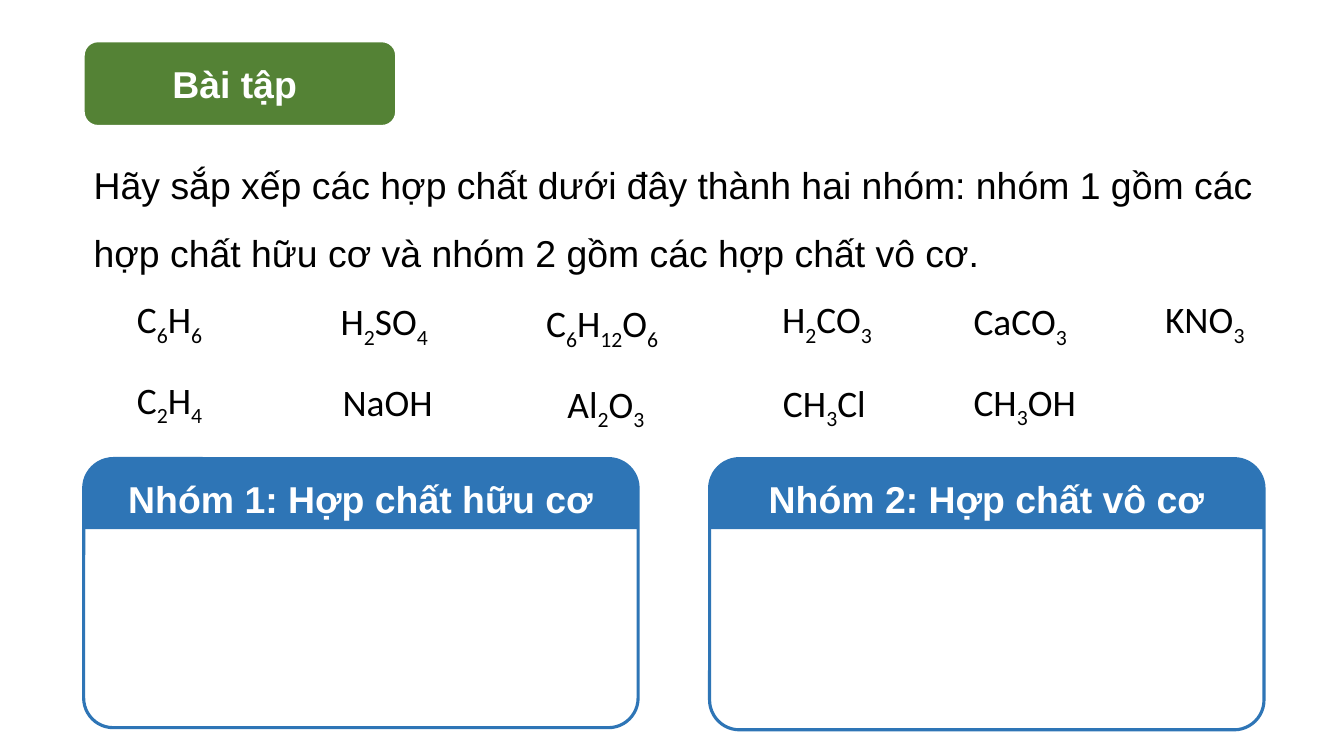
from itertools import groupby

from lxml import etree
from pptx import Presentation
from pptx.dml.color import RGBColor
from pptx.enum import shapes, text
from pptx.util import Pt

WHITE = RGBColor(0xFF, 0xFF, 0xFF)
BLACK = RGBColor(0, 0, 0)
GREEN = RGBColor(0x54, 0x82, 0x35)
BLUE = RGBColor(0x2E, 0x75, 0xB6)

TEXT_SIZE = Pt(26.7)
MARGIN = 59.8
GROUP_WIDTH = 396

# formula, left, top, width
COMPOUNDS = [
    ("C6H6", 90.7, 208.1, 73.4),
    ("H2SO4", 236.2, 209.5, 92.9),
    ("C6H12O6", 383, 211, 114.5),
    ("H2CO3", 551.5, 208.1, 94.3),
    ("CaCO3", 688.3, 209.5, 99.4),
    ("KNO3", 825.1, 208.1, 82.8),
    ("C2H4", 90.7, 265.7, 73.4),
    ("NaOH", 237.6, 267.1, 89.3),
    ("Al2O3", 398.2, 268.6, 79.2),
    ("CH3Cl", 552.2, 267.8, 88.6),
    ("CH3OH", 688.3, 267.1, 103.7),
]


def style_run(run, font_name, color, bold=False):
    run.font.name = font_name
    run.font.size = TEXT_SIZE
    run.font.color.rgb = color
    run.font.bold = bold


def add_panel(slide, preset, box, fill, line=None, line_width=0, corners=()):
    panel = slide.shapes.add_shape(preset, *map(Pt, box))
    panel.shadow.inherit = False
    panel.fill.solid()
    panel.fill.fore_color.rgb = fill
    if line is None:
        panel.line.fill.background()
    else:
        panel.line.color.rgb = line
        panel.line.width = Pt(line_width)
    for index, corner in enumerate(corners):
        panel.adjustments[index] = corner
    return panel


def write_heading(panel, wording):
    frame = panel.text_frame
    frame.text = wording
    frame.vertical_anchor = text.MSO_ANCHOR.MIDDLE
    heading = frame.paragraphs[0]
    heading.alignment = text.PP_ALIGN.CENTER
    style_run(heading.runs[0], "Arial", WHITE, bold=True)


def add_title(slide, box):
    badge = add_panel(slide, shapes.MSO_SHAPE.ROUNDED_RECTANGLE, box,
                      GREEN, WHITE, 1.5)
    write_heading(badge, "Bài tập ")


def add_task(slide, box):
    frame = slide.shapes.add_textbox(*map(Pt, box)).text_frame
    frame.word_wrap = True
    frame.text = ("Hãy sắp xếp các hợp chất dưới đây thành hai nhóm: nhóm 1 gồm "
                  "các hợp chất hữu cơ và nhóm 2 gồm các hợp chất vô cơ.")
    task = frame.paragraphs[0]
    task.alignment = text.PP_ALIGN.JUSTIFY
    task.line_spacing = 1.5
    style_run(task.runs[0], "Arial", BLACK)


def add_compound(slide, formula, box):
    """Write a formula with its digits as subscripts."""
    frame = slide.shapes.add_textbox(*map(Pt, box)).text_frame
    frame.word_wrap = False
    for is_count, symbols in groupby(formula, str.isdigit):
        part = frame.paragraphs[0].add_run()
        part.text = "".join(symbols)
        style_run(part, "Calibri", BLACK)
        if is_count:
            part.font._element.set("baseline", "-25000")


def add_group(slide, wording, box):
    """Draw an empty answer frame under a blue heading band."""
    left, top, width, _ = box
    add_panel(slide, shapes.MSO_SHAPE.ROUNDED_RECTANGLE, box,
              WHITE, BLUE, 2.25, [0.11])
    band = add_panel(slide, shapes.MSO_SHAPE.ROUND_2_SAME_RECTANGLE,
                     (left, top, width, 50.4), BLUE, corners=[0.431, 0])
    write_heading(band, wording)


def main():
    deck = Presentation()
    deck.slide_width, deck.slide_height = Pt(960), Pt(540)
    slide = deck.slides.add_slide(deck.slide_layouts[6])

    add_title(slide, (MARGIN, 29.5, 223.2, 60.5))
    add_task(slide, (MARGIN, 96.5, 843.8, 97.9))
    add_group(slide, "Nhóm 1: Hợp chất hữu cơ", (MARGIN, 327.6, GROUP_WIDTH, 192.2))
    add_group(slide, "Nhóm 2: Hợp chất vô cơ", (506.9, 327.6, GROUP_WIDTH, 193.7))
    for formula, left, top, width in COMPOUNDS:
        add_compound(slide, formula, (left, top, width, 39.6))

    deck.save("out.pptx")


if __name__ == "__main__":
    main()
